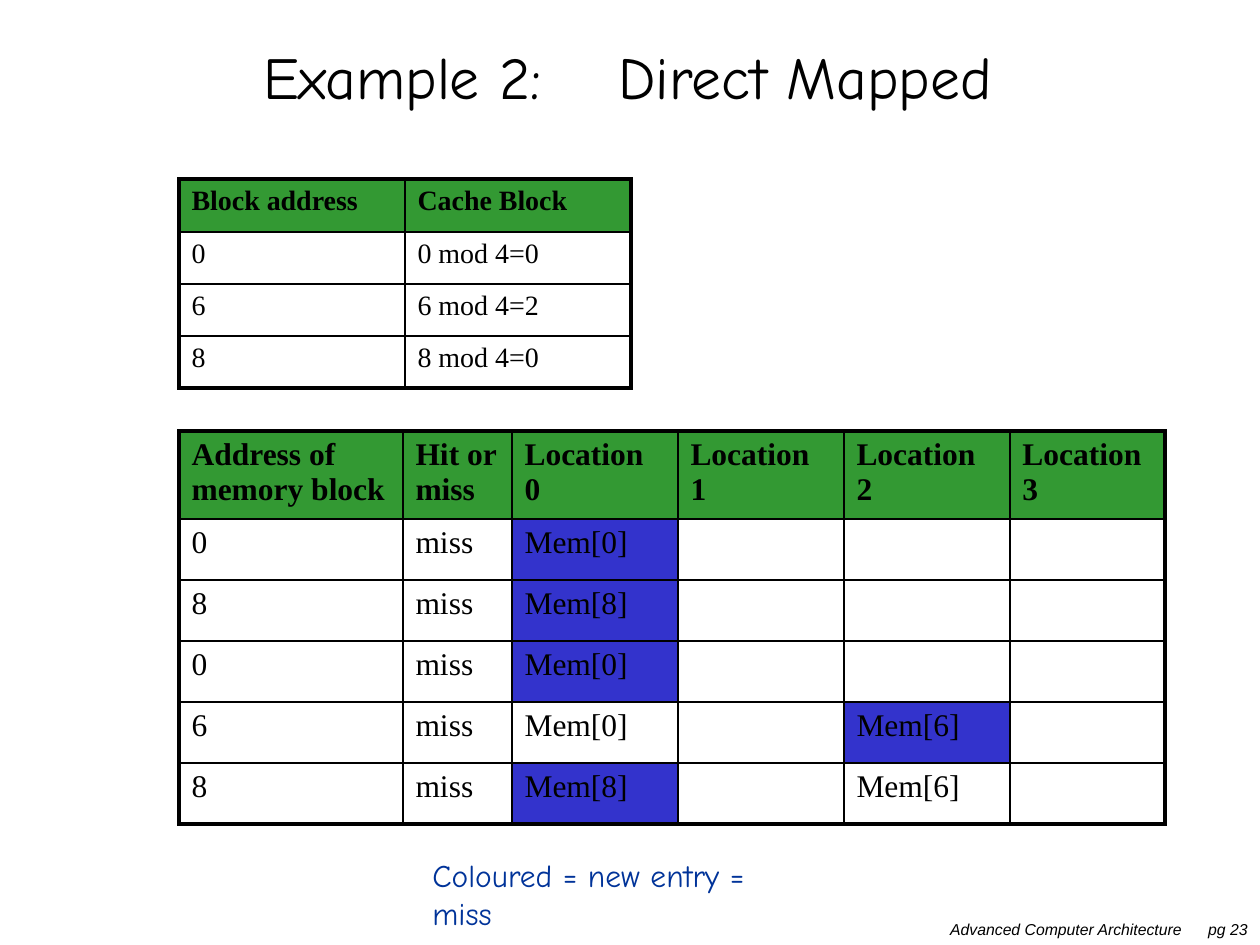
from pptx import Presentation
from pptx.dml.color import RGBColor as RGB
from pptx.enum.text import MSO_ANCHOR as Anchor, PP_ALIGN as Align
from pptx.oxml import parse_xml
from pptx.oxml.ns import nsdecls
from pptx.util import Pt

PX = 914400 // 126
SERIF, COMIC = "Times New Roman", "Comic Neue"
GREEN, BLUE, BLACK = "339933", "3333CC", "000000"


def style(para, face, size, color=BLACK, bold=False, italic=False):
    font = para.font
    font.name, font.size = face, Pt(size)
    font.bold, font.italic = bold, italic
    font.color.rgb = RGB.from_string(color)


def edge(cell, side, width):
    cell._tc.get_or_add_tcPr().append(parse_xml(
        f'<a:ln{side} {nsdecls("a")} w="{Pt(width)}"><a:solidFill>'
        f'<a:srgbClr val="{BLACK}"/></a:solidFill></a:ln{side}>'))


deck = Presentation()
deck.slide_width, deck.slide_height = 1260 * PX, 945 * PX
slide = deck.slides.add_slide(deck.slide_layouts[6])

# Title, note and footer: text, box, face, size, colour, align, italic
texts = [
    ("Example 2:", (40, 32, 514, 100), COMIC, 34, BLACK, Align.RIGHT, False),
    ("Direct Mapped", (606, 32, 612, 100), COMIC, 34, BLACK, Align.LEFT, False),
    ("Coloured = new entry = miss", (420, 850, 392, 90), COMIC, 18, "003399",
     Align.LEFT, False),
    ("Advanced Computer Architecture", (898, 914, 296, 31), "Arial", 9, BLACK,
     Align.RIGHT, True),
    ("pg 23", (1180, 914, 80, 31), "Arial", 9, BLACK, Align.RIGHT, True),
]
for text, box, face, size, color, align, italic in texts:
    frame = slide.shapes.add_textbox(*(n * PX for n in box)).text_frame
    frame.word_wrap = True
    para = frame.paragraphs[0]
    para.text, para.alignment = text, align
    style(para, face, size, color, italic=italic)
    if size == 34:
        frame.vertical_anchor = Anchor.MIDDLE
        para.line_spacing = 0.8

# Tables: top, font size, column widths, row heights, rows, new entries
tables = [
    (179, 16, [226] * 2, [53] + [52] * 3, [
        ["Block address", "Cache Block"],
        *([str(n), f"{n} mod 4={n % 4}"] for n in (0, 6, 8)),
    ], []),
    (431, 18, [224, 109, 166, 166, 166, 155], [82] + [61] * 5, [
        ["Address of memory block", "Hit or miss"]
        + [f"Location {n}" for n in range(4)],
        ["0", "miss", "Mem[0]", "", "", ""],
        ["8", "miss", "Mem[8]", "", "", ""],
        ["0", "miss", "Mem[0]", "", "", ""],
        ["6", "miss", "Mem[0]", "", "Mem[6]", ""],
        ["8", "miss", "Mem[8]", "", "Mem[6]", ""],
    ], [(1, 2), (2, 2), (3, 2), (4, 4), (5, 2)]),
]
for top, size, wide, high, rows, fresh in tables:
    table = slide.shapes.add_table(
        len(high), len(wide), 179 * PX, top * PX,
        sum(wide) * PX, sum(high) * PX).table
    table.first_row = table.horz_banding = False
    for col, width in zip(table.columns, wide):
        col.width = width * PX
    for row, height in zip(table.rows, high):
        row.height = height * PX
    for r, row in enumerate(rows):
        for c, text in enumerate(row):
            cell = table.cell(r, c)
            cell.text = text
            style(cell.text_frame.paragraphs[0], SERIF, size, bold=r == 0)
            # Thick outer frame, thin inner lines
            outer = {"L": c == 0, "R": c == len(wide) - 1,
                     "T": r == 0, "B": r == len(high) - 1}
            for side, thick in outer.items():
                edge(cell, side, 2.25 if thick else 1)
            if r == 0 or (r, c) in fresh:
                cell.fill.solid()
                cell.fill.fore_color.rgb = RGB.from_string(BLUE if r else GREEN)
            else:
                cell.fill.background()

deck.save("out.pptx")
